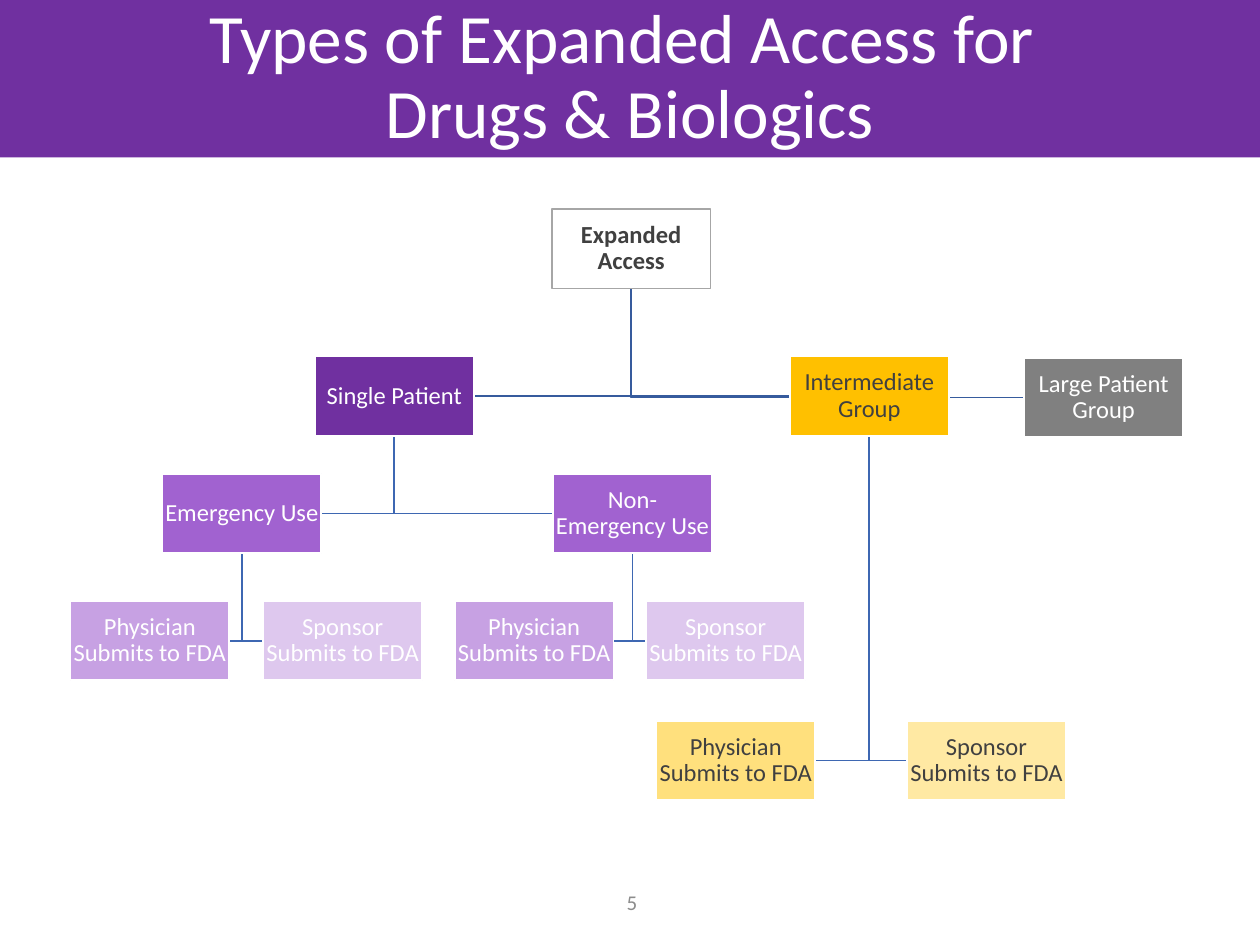
"""Build the expanded access slide: a title band above a tree of access types."""
from dataclasses import dataclass
from typing import Optional

from pptx import Presentation
from pptx import util as u
from pptx.dml.color import RGBColor
from pptx.enum import shapes, text

FONT = "Calibri"
WHITE, DARK, PURPLE = "FFFFFF", "404040", "7030A0"
BOX_WIDTH, BOX_HEIGHT = 1.26, 0.63
PHYSICIAN, SPONSOR = "Physician Submits to FDA", "Sponsor Submits to FDA"


@dataclass(frozen=True)
class Box:
    label: str
    left: float
    top: float
    fill: Optional[str]
    color: str = WHITE
    border: str = WHITE
    bold: bool = False
    parent: Optional["Box"] = None
    link: str = "3E67B2"

    @property
    def center(self) -> float:
        return self.left + BOX_WIDTH / 2

    @property
    def middle(self) -> float:
        return self.top + BOX_HEIGHT / 2


def rgb(value: str) -> RGBColor:
    return RGBColor.from_string(value)


def add_run(paragraph, words: str, size: float, color: str, bold: bool = False) -> None:
    run = paragraph.add_run()
    run.text = words
    run.font.name = FONT
    run.font.size = u.Pt(size)
    run.font.bold = bold
    run.font.color.rgb = rgb(color)


def center_text(frame, line_spacing: float = 1.0):
    frame.word_wrap = True
    frame.auto_size = text.MSO_AUTO_SIZE.NONE
    frame.vertical_anchor = text.MSO_ANCHOR.MIDDLE
    paragraph = frame.paragraphs[0]
    paragraph.alignment = text.PP_ALIGN.CENTER
    paragraph.line_spacing = line_spacing
    return paragraph


def draw_link(slide, box: Box) -> None:
    parent = box.parent
    side = box.left if box.left > parent.center else box.left + BOX_WIDTH
    builder = slide.shapes.build_freeform(
        u.Inches(parent.center), u.Inches(parent.top + BOX_HEIGHT))
    corners = [(parent.center, box.middle), (side, box.middle)]
    builder.add_line_segments(
        [(u.Inches(x), u.Inches(y)) for x, y in corners], close=False)
    shape = builder.convert_to_shape()
    shape.shadow.inherit = False
    shape.fill.background()
    shape.line.color.rgb = rgb(box.link)
    shape.line.width = u.Pt(1)


def draw_box(slide, box: Box) -> None:
    shape = slide.shapes.add_shape(
        shapes.MSO_SHAPE.RECTANGLE, u.Inches(box.left), u.Inches(box.top),
        u.Inches(BOX_WIDTH), u.Inches(BOX_HEIGHT))
    shape.shadow.inherit = False
    if box.fill:
        shape.fill.solid()
        shape.fill.fore_color.rgb = rgb(box.fill)
    else:
        shape.fill.background()
    shape.line.color.rgb = rgb(box.border)
    shape.line.width = u.Pt(1)
    frame = shape.text_frame
    frame.margin_left = frame.margin_right = u.Inches(0.01)
    frame.margin_top = frame.margin_bottom = u.Inches(0.01)
    add_run(center_text(frame, 0.9), box.label, 14, box.color, box.bold)


def draw_title(slide) -> None:
    title = slide.shapes.title
    title.left, title.top = u.Inches(0), u.Inches(0)
    title.width, title.height = u.Inches(10), u.Inches(1.25)
    title.fill.solid()
    title.fill.fore_color.rgb = rgb(PURPLE)
    paragraph = center_text(title.text_frame, 0.9)
    add_run(paragraph, "Types of Expanded Access for ", 39.6, WHITE)
    paragraph.add_line_break()
    add_run(paragraph, "Drugs & Biologics", 39.6, WHITE)


def draw_page_number(slide) -> None:
    number = slide.shapes.add_textbox(
        u.Inches(4.68), u.Inches(6.96), u.Inches(0.67), u.Inches(0.4))
    add_run(center_text(number.text_frame), "5", 12, "8C8C8C")


def access_tree() -> list[Box]:
    root = Box("Expanded Access", 4.38, 1.66, None, DARK, "A6A6A6", True)
    main_link = "365B9D"
    single = Box("Single Patient", 2.5, 2.83, PURPLE, parent=root, link=main_link)
    group = Box("Intermediate Group", 6.27, 2.83, "FFC000", DARK,
                parent=root, link=main_link)
    large = Box("Large Patient Group", 8.13, 2.84, "808080",
                parent=root, link=main_link)
    emergency = Box("Emergency Use", 1.29, 3.76, "A162D0", parent=single)
    planned = Box("Non-Emergency Use", 4.39, 3.76, "A162D0", parent=single)
    boxes = [root, single, group, large, emergency, planned]
    submitters = [
        (emergency, 0.56, 2.09, 4.77, "C7A1E3", "DEC8EE", WHITE),
        (planned, 3.61, 5.13, 4.77, "C7A1E3", "DEC8EE", WHITE),
        (group, 5.21, 7.2, 5.72, "FFE07D", "FFE9A3", DARK),
    ]
    for parent, left, right, top, left_fill, right_fill, color in submitters:
        boxes.append(Box(PHYSICIAN, left, top, left_fill, color, parent=parent))
        boxes.append(Box(SPONSOR, right, top, right_fill, color, parent=parent))
    return boxes


def main() -> None:
    presentation = Presentation()
    presentation.slide_width = u.Inches(10)
    presentation.slide_height = u.Inches(7.5)
    slide = presentation.slides.add_slide(presentation.slide_layouts[5])
    draw_title(slide)
    draw_page_number(slide)
    boxes = access_tree()
    for box in boxes:
        if box.parent:
            draw_link(slide, box)
    for box in boxes:
        draw_box(slide, box)
    presentation.save("out.pptx")


if __name__ == "__main__":
    main()
